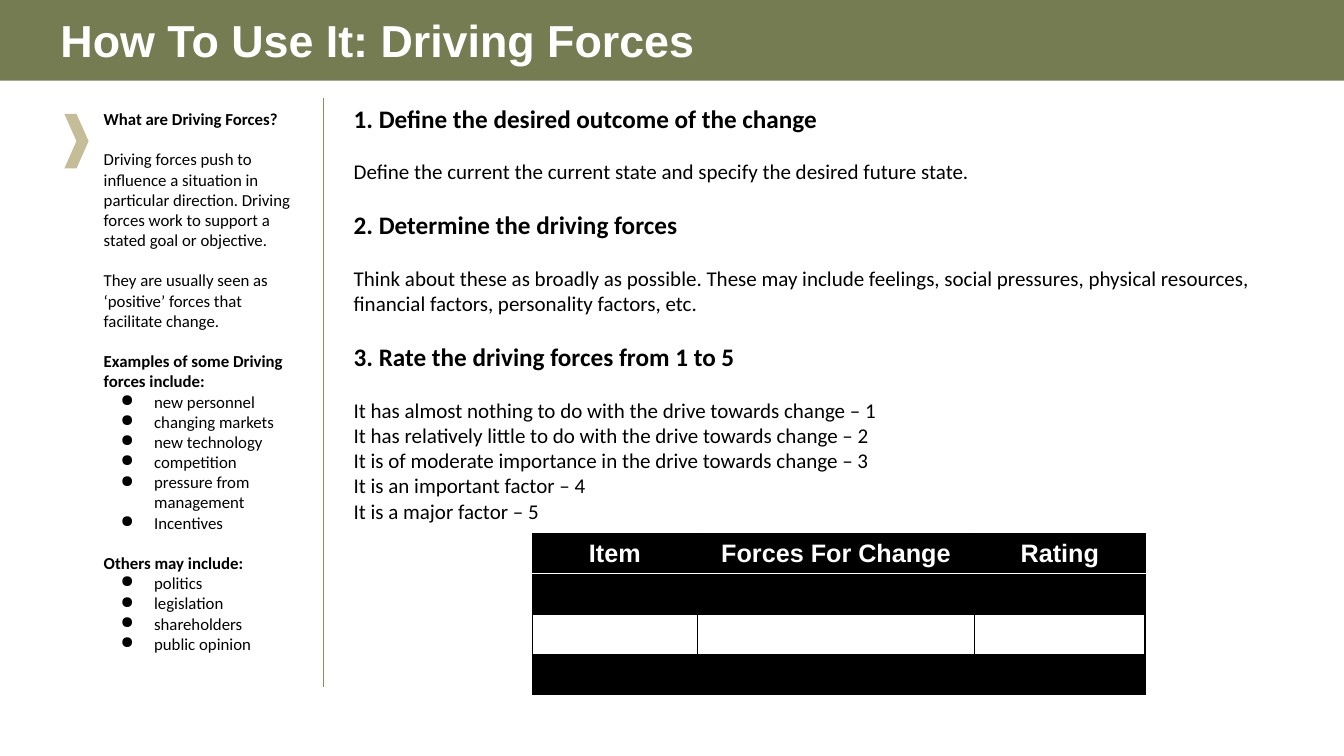
from dataclasses import dataclass

import pptx
import pptx.dml.color
import pptx.enum.shapes
import pptx.enum.text
import pptx.oxml
import pptx.oxml.ns
import pptx.util

Pt = pptx.util.Pt
RGB = pptx.dml.color.RGBColor.from_string
SHAPES = pptx.enum.shapes.MSO_SHAPE
ALIGN = pptx.enum.text.PP_ALIGN
ANCHOR = pptx.enum.text.MSO_ANCHOR
NS = pptx.oxml.ns.nsdecls("a")


@dataclass(frozen=True)
class Theme:
    olive: str = "767C52"
    tan: str = "C4BD97"
    rule: str = "938953"
    black: str = "000000"
    white: str = "FFFFFF"
    head_font: str = "Arial"
    body_font: str = "Calibri"
    title: float = 32
    heading: float = 18
    body: float = 15
    side: float = 12
    band_alpha: int = 20


THEME = Theme()

# Each paragraph: (style, text); a "gap" style opens a line of space above
SIDEBAR = [
    ("bold", "What are Driving Forces?"),
    ("gap", "Driving forces push to influence a situation in particular direction. "
            "Driving forces work to support a stated goal or objective."),
    ("gap", "They are usually seen as ‘positive’ forces that facilitate change."),
    ("bold gap", "Examples of some Driving forces include:"),
    ("bullet", "new personnel"),
    ("bullet", "changing markets"),
    ("bullet", "new technology"),
    ("bullet", "competition"),
    ("bullet", "pressure from management"),
    ("bullet", "Incentives"),
    ("bold gap", "Others may include:"),
    ("bullet", "politics"),
    ("bullet", "legislation"),
    ("bullet", "shareholders"),
    ("bullet", "public opinion"),
]
STEPS = [
    ("bold", "1. Define the desired outcome of the change"),
    ("gap", "Define the current the current state and specify the desired future state."),
    ("bold gap", "2. Determine the driving forces"),
    ("gap", "Think about these as broadly as possible. These may include feelings, "
            "social pressures, physical resources, financial factors, personality factors, etc."),
    ("bold gap", "3. Rate the driving forces from 1 to 5"),
    ("gap", "It has almost nothing to do with the drive towards change – 1"),
    ("", "It has relatively little to do with the drive towards change – 2"),
    ("", "It is of moderate importance in the drive towards change – 3"),
    ("", "It is an important factor – 4"),
    ("", "It is a major factor – 5"),
]
RATING_COLUMNS = [("Item", 118), ("Forces For Change", 198), ("Rating", 121.7)]


def style_runs(paragraph, font, size, color, bold):
    for run in paragraph.runs:
        run.font.name = font
        run.font.size = Pt(size)
        run.font.bold = bold
        run.font.color.rgb = RGB(color)


def add_bullet(paragraph):
    properties = paragraph._p.get_or_add_pPr()
    properties.set("marL", str(Pt(36)))
    properties.set("indent", str(-Pt(24)))
    for xml in (f'<a:buClr {NS}><a:srgbClr val="{THEME.black}"/></a:buClr>',
                f'<a:buChar {NS} char="●"/>'):
        properties.append(pptx.oxml.parse_xml(xml))


def add_text(slide, box, paragraphs, size, bold_size, gap):
    frame = slide.shapes.add_textbox(*map(Pt, box)).text_frame
    frame.word_wrap = True
    frame.text = "\n".join(text for _, text in paragraphs)
    for paragraph, (style, _) in zip(frame.paragraphs, paragraphs):
        bold = "bold" in style
        if "gap" in style:
            paragraph.space_before = Pt(gap)
        if style == "bullet":
            add_bullet(paragraph)
        style_runs(paragraph, THEME.body_font, bold_size if bold else size, THEME.black, bold)


def add_block(slide, preset, box, color):
    block = slide.shapes.add_shape(preset, *map(Pt, box))
    block.shadow.inherit = False
    block.fill.solid()
    block.fill.fore_color.rgb = RGB(color)
    block.line.fill.background()
    return block


def add_title(slide, text):
    band = add_block(slide, SHAPES.RECTANGLE, (0, 0, 960, 57.6), THEME.olive)
    slide.shapes._spTree.insert(2, band._element)  # behind the title
    title = slide.shapes.title
    title.left, title.top, title.width, title.height = map(Pt, (36, 0, 790, 56))
    frame = title.text_frame
    frame.text = text
    frame.auto_size = pptx.enum.text.MSO_AUTO_SIZE.NONE
    frame.vertical_anchor = ANCHOR.MIDDLE
    frame.paragraphs[0].alignment = ALIGN.LEFT
    style_runs(frame.paragraphs[0], THEME.head_font, THEME.title, THEME.white, True)


def add_divider(slide, x, top, bottom):
    divider = slide.shapes.add_connector(
        pptx.enum.shapes.MSO_CONNECTOR.STRAIGHT, Pt(x), Pt(top), Pt(x), Pt(bottom))
    divider.line.color.rgb = RGB(THEME.rule)
    divider.line.width = Pt(0.75)
    divider._element.spPr.append(pptx.oxml.parse_xml(f"<a:effectLst {NS}/>"))


def set_borders(cell, top, bottom):
    sides = {"L": THEME.black, "R": THEME.black, "T": top, "B": bottom}
    for side, color in sides.items():
        cell._tc.get_or_add_tcPr().append(pptx.oxml.parse_xml(
            f'<a:ln{side} {NS} w="{Pt(1)}"><a:solidFill><a:srgbClr val="{color}"/>'
            f"</a:solidFill></a:ln{side}>"))


def fill_cell(cell, row):
    if row and row % 2 == 0:
        cell.fill.background()
        return
    cell.fill.solid()
    cell.fill.fore_color.rgb = RGB(THEME.black)
    if row:
        color = cell._tc.tcPr.find(".//" + pptx.oxml.ns.qn("a:srgbClr"))
        color.append(pptx.oxml.parse_xml(f'<a:alpha {NS} val="{THEME.band_alpha * 1000}"/>'))


def add_rating_table(slide, left, top, columns, heights):
    width = sum(w for _, w in columns)
    table = slide.shapes.add_table(len(heights), len(columns), Pt(left), Pt(top),
                                   Pt(width), Pt(sum(heights))).table
    table.horz_banding = False
    for row, height in enumerate(heights):
        table.rows[row].height = Pt(height)
        for column, (label, column_width) in enumerate(columns):
            table.columns[column].width = Pt(column_width)
            cell = table.cell(row, column)
            set_borders(cell, THEME.white if row == 1 else THEME.black,
                        THEME.white if row == 0 else THEME.black)
            fill_cell(cell, row)
            if row == 0:
                cell.text_frame.text = label
                cell.vertical_anchor = ANCHOR.MIDDLE
                heading = cell.text_frame.paragraphs[0]
                heading.alignment = ALIGN.CENTER
                style_runs(heading, THEME.head_font, THEME.heading, THEME.white, True)
            else:
                cell.margin_top = cell.margin_bottom = 0


def main():
    deck = pptx.Presentation()
    deck.slide_width, deck.slide_height = Pt(960), Pt(540)
    slide = deck.slides.add_slide(deck.slide_layouts.get_by_name("Title Only"))
    add_title(slide, "How To Use It: Driving Forces")

    # Sidebar
    add_divider(slide, 231, 70, 491)
    add_text(slide, (67, 74, 150.5, 417), SIDEBAR, THEME.side, THEME.side, 14.5)
    add_block(slide, SHAPES.CHEVRON, (46, 81.4, 17.3, 38.9), THEME.tan)

    # Steps and rating table
    add_text(slide, (245.5, 70, 677.5, 305), STEPS, THEME.body, THEME.heading, 18.3)
    add_rating_table(slide, 380.2, 381, RATING_COLUMNS, [24, 28.8, 28.8, 28.8])
    deck.save("out.pptx")


if __name__ == "__main__":
    main()
